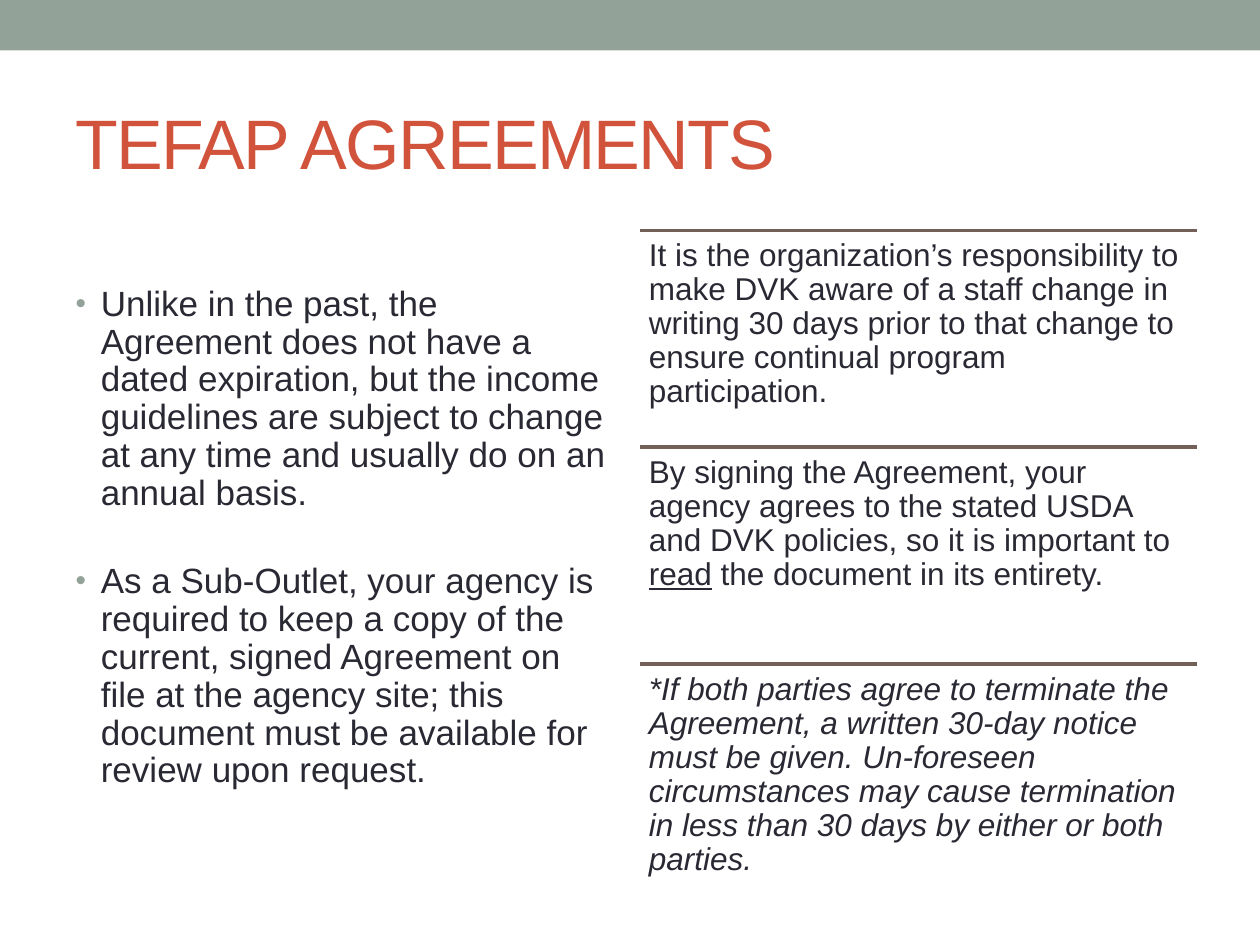
from dataclasses import dataclass

import lxml.etree
import pptx
import pptx.dml.color
import pptx.enum.shapes
import pptx.enum.text
import pptx.oxml.ns
import pptx.util
from pptx.util import Inches


@dataclass(frozen=True)
class Theme:
    font: str = "Arial"
    band: str = "93A299"
    title: str = "D2533C"
    text: str = "292934"
    rule: str = "726056"
    title_size: int = 40
    body_size: int = 20
    note_size: int = 18
    rule_width: float = 2.08
    line_spacing: float = 0.9


THEME = Theme()

BULLETS = [
    "Unlike in the past, the Agreement does not have a dated expiration, but the income "
    "guidelines are subject to change at any time and usually do on an annual basis.",
    "As a Sub-Outlet, your agency is required to keep a copy of the current, signed Agreement "
    "on file at the agency site; this document must be available for review upon request.",
]

NOTES = [
    [("It is the organization’s responsibility to make DVK aware of a staff change in writing "
      "30 days prior to that change to ensure continual program participation.", {})],
    [("By signing the Agreement, your agency agrees to the stated USDA and DVK policies, "
      "so it is important to ", {}),
     ("read", {"underline": True}),
     (" the document in its entirety.", {})],
    [("*If both parties agree to terminate the Agreement, a written 30-day notice must be given. "
      "Un-foreseen circumstances may cause termination in less than 30 days by either or both "
      "parties.", {"italic": True})],
]


def rgb(value):
    return pptx.dml.color.RGBColor.from_string(value)


def add_xml(parent, tag, **attributes):
    return lxml.etree.SubElement(parent, pptx.oxml.ns.qn(tag), attributes)


def add_text(paragraph, text, size, color=THEME.text, italic=None, underline=None, spacing=None):
    run = paragraph.add_run()
    run.text = text
    run.font.name = THEME.font
    run.font.size = pptx.util.Pt(size)
    run.font.color.rgb = rgb(color)
    run.font.italic = italic
    run.font.underline = underline
    if spacing is not None:
        run.font._element.set("spc", str(spacing))


def place(shape, left, top, width, height):
    shape.left, shape.top = Inches(left), Inches(top)
    shape.width, shape.height = Inches(width), Inches(height)


def add_bullet(paragraph):
    properties = paragraph._p.get_or_add_pPr()
    properties.set("marL", str(Inches(0.2)))
    properties.set("indent", str(Inches(-0.2)))
    color = add_xml(properties, "a:buClr")
    add_xml(color, "a:srgbClr", val=THEME.band)
    add_xml(properties, "a:buSzPct", val="85000")
    add_xml(properties, "a:buFont", typeface=THEME.font)
    add_xml(properties, "a:buChar", char="•")


def add_band(slide, left, top, width, height):
    band = slide.shapes.add_shape(
        pptx.enum.shapes.MSO_SHAPE.RECTANGLE,
        Inches(left), Inches(top), Inches(width), Inches(height))
    band.shadow.inherit = False
    band.fill.solid()
    band.fill.fore_color.rgb = rgb(THEME.band)
    band.line.fill.background()


def fill_title(slide, left, top, width, height):
    title = slide.shapes.title
    place(title, left, top, width, height)
    frame = title.text_frame
    frame.vertical_anchor = pptx.enum.text.MSO_ANCHOR.MIDDLE
    frame.auto_size = pptx.enum.text.MSO_AUTO_SIZE.NONE
    paragraph = frame.paragraphs[0]
    paragraph.alignment = pptx.enum.text.PP_ALIGN.LEFT
    add_text(paragraph, "TEFAP AGREEMENTS", THEME.title_size, color=THEME.title, spacing=-100)


def fill_bullets(slide, left, top, width, height):
    body = slide.placeholders[1]
    place(body, left, top, width, height)
    frame = body.text_frame
    frame.auto_size = pptx.enum.text.MSO_AUTO_SIZE.NONE
    frame.margin_top = Inches(0.44)
    for index, text in enumerate(BULLETS):
        paragraph = frame.add_paragraph() if index else frame.paragraphs[0]
        paragraph.line_spacing = THEME.line_spacing
        paragraph.space_before = pptx.util.Pt(29 if index else 0)
        add_bullet(paragraph)
        add_text(paragraph, text, THEME.body_size)


def add_note(slide, runs, left, top, width, height):
    rule = slide.shapes.add_connector(
        pptx.enum.shapes.MSO_CONNECTOR.STRAIGHT,
        Inches(left), Inches(top), Inches(left + width), Inches(top))
    rule.line.color.rgb = rgb(THEME.rule)
    rule.line.width = pptx.util.Pt(THEME.rule_width)
    add_xml(rule._element.spPr, "a:effectLst")

    box = slide.shapes.add_textbox(Inches(left), Inches(top), Inches(width), Inches(height))
    frame = box.text_frame
    frame.word_wrap = True
    frame.margin_left = frame.margin_right = Inches(0.07)
    frame.margin_top = frame.margin_bottom = Inches(0.07)
    paragraph = frame.paragraphs[0]
    paragraph.line_spacing = THEME.line_spacing
    for text, style in runs:
        add_text(paragraph, text, THEME.note_size, **style)


def add_notes(slide, left, top, width, height):
    row_height = height / len(NOTES)
    for index, runs in enumerate(NOTES):
        add_note(slide, runs, left, top + index * row_height, width, row_height)


def main():
    presentation = pptx.Presentation()
    presentation.slide_width, presentation.slide_height = Inches(10), Inches(7.5)
    slide = presentation.slides.add_slide(presentation.slide_layouts[1])
    add_band(slide, 0, 0, 10, 0.4)
    fill_title(slide, 0.5, 0.58, 9, 1.08)
    fill_bullets(slide, 0.5, 1.83, 4.42, 5.16)
    add_notes(slide, 5.08, 1.83, 4.42, 5.16)
    presentation.save("out.pptx")


if __name__ == "__main__":
    main()
